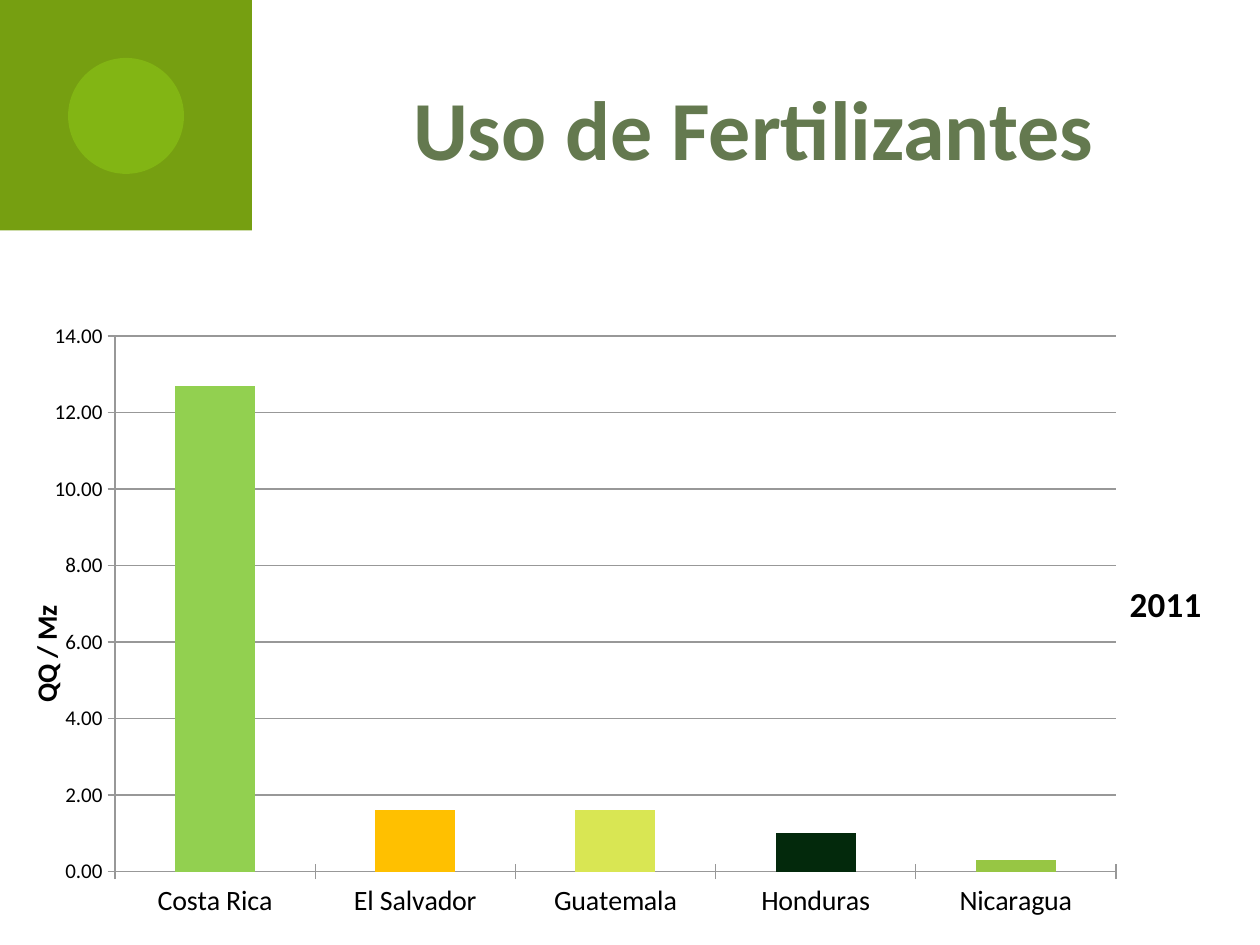
from lxml.etree import SubElement
from pptx import Presentation
from pptx.chart.data import CategoryChartData
from pptx.dml.color import RGBColor
from pptx.enum.chart import XL_CHART_TYPE as ChartType, XL_TICK_MARK as TickMark
from pptx.enum.shapes import MSO_SHAPE as Preset
from pptx.enum.text import MSO_ANCHOR as Anchor, MSO_AUTO_SIZE as AutoSize, PP_ALIGN as Align
from pptx.oxml import parse_xml
from pptx.oxml.ns import nsdecls, qn
from pptx.util import Inches, Pt

FONT = "Calibri"
DARK_GREEN = RGBColor(0x76, 0x9F, 0x11)
LIGHT_GREEN = RGBColor(0x8F, 0xCB, 0x17)
OLIVE = RGBColor(0x64, 0x79, 0x4F)
BLACK = RGBColor(0, 0, 0)
GREY = RGBColor(0x98, 0x98, 0x98)

TITLE = "Uso de Fertilizantes"
YEAR = "2011"
UNIT = "QQ / Mz"
COUNTRIES = [
    ("Costa Rica", 12.7, RGBColor(0x92, 0xD0, 0x50)),
    ("El Salvador", 1.6, RGBColor(0xFF, 0xC0, 0x00)),
    ("Guatemala", 1.6, RGBColor(0xD9, 0xE6, 0x53)),
    ("Honduras", 1, RGBColor(0x03, 0x29, 0x0C)),
    ("Nicaragua", 0.3, RGBColor(0x97, 0xC6, 0x44)),
]


def add_ornament(page, preset, area, color):
    shape = page.shapes.add_shape(preset, *map(Inches, area))
    shape.shadow.inherit = False
    shape.fill.solid()
    shape.fill.fore_color.rgb = color
    shape.line.fill.background()
    return shape


def style(font, size, color=BLACK, bold=False):
    font.name = FONT
    font.size = Pt(size)
    font.bold = bold
    font.color.rgb = color


def write(frame, text, size, color=BLACK):
    para = frame.paragraphs[0]
    para.alignment = Align.CENTER
    span = para.add_run()
    span.text = text
    style(span.font, size, color, bold=True)


def place(element, index, **shares):
    for old in element.findall(qn("c:layout")):
        element.remove(old)
    layout = parse_xml(f"<c:layout {nsdecls('c')}><c:manualLayout/></c:layout>")
    modes = {"xMode": "edge", "yMode": "edge"}
    if "w" in shares:
        modes = {"layoutTarget": "inner", **modes}
    for tag, value in {**modes, **shares}.items():
        SubElement(layout[0], qn(f"c:{tag}")).set("val", str(value))
    element.insert(index, layout)


def add_title(page):
    title = page.shapes.title
    title.left, title.top, title.width, title.height = map(Inches, (3.15, 0.56, 5.66, 0.91))
    frame = title.text_frame
    frame.word_wrap = False
    frame.auto_size = AutoSize.SHAPE_TO_FIT_TEXT
    frame.vertical_anchor = Anchor.TOP
    write(frame, TITLE, 48, OLIVE)


def add_bars(page):
    data = CategoryChartData(number_format="#,##0.00")
    data.categories = [name for name, _, _ in COUNTRIES]
    data.add_series("Series 1", [value for _, value, _ in COUNTRIES])
    area = map(Inches, (-0.02, 1.94, 9.82, 5.43))
    chart = page.shapes.add_chart(ChartType.COLUMN_CLUSTERED, *area, data).chart
    chart.has_legend = False
    style(chart.font, 10)

    plot = chart.plots[0]
    plot.vary_by_categories = False
    plot.gap_width = 150
    series = plot.series[0]
    series.format.fill.solid()
    series.format.fill.fore_color.rgb = LIGHT_GREEN
    for index, (_, _, color) in enumerate(COUNTRIES):
        fill = series.points[index].format.fill
        fill.solid()
        fill.fore_color.rgb = color

    values = chart.value_axis
    values.minimum_scale, values.maximum_scale, values.major_unit = 0, 14, 2
    values.has_major_gridlines = True
    values.tick_labels.number_format = "#,##0.00"
    values.tick_labels.number_format_is_linked = False
    for axis, size in ((chart.category_axis, 16), (values, 12)):
        axis.major_tick_mark = TickMark.CROSS
        axis.format.line.color.rgb = GREY
        style(axis.tick_labels.font, size)
    values.major_gridlines.format.line.color.rgb = GREY

    heading = chart.chart_title
    write(heading.text_frame, YEAR, 20)
    place(heading.element, 1, x=0.91, y=0.48)
    heading.element.find(qn("c:overlay")).set("val", "1")

    unit = values.axis_title
    write(unit.text_frame, UNIT, 16)
    place(unit.element, 1, x=0.02, y=0.52)
    turn = unit.element.find(".//" + qn("a:bodyPr"))
    turn.set("rot", "-5400000")
    turn.set("vert", "horz")

    plot_area = chart.element.find(".//" + qn("c:plotArea"))
    place(plot_area, 0, x=0.095, y=0.134, w=0.809, h=0.783)


def main():
    deck = Presentation()
    deck.slide_width, deck.slide_height = Inches(10), Inches(7.5)
    page = deck.slides.add_slide(deck.slide_layouts[5])
    add_ornament(page, Preset.RECTANGLE, (0, 0, 2, 1.83), DARK_GREEN)
    disc = add_ornament(page, Preset.OVAL, (0.54, 0.46, 0.92, 0.92), LIGHT_GREEN)
    color = disc.fill._xPr.find(".//" + qn("a:srgbClr"))
    SubElement(color, qn("a:alpha")).set("val", "50000")
    add_title(page)
    add_bars(page)
    deck.save("out.pptx")


if __name__ == "__main__":
    main()
